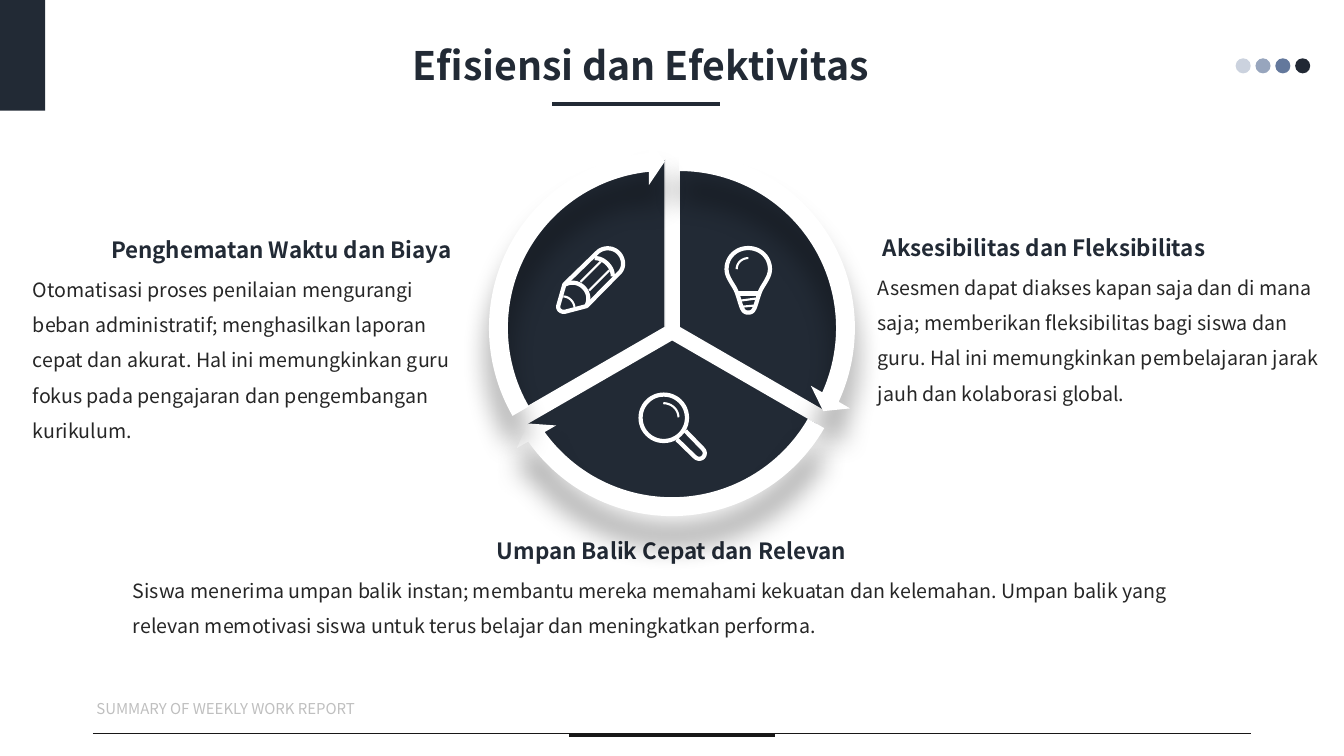
from dataclasses import dataclass

from lxml.etree import SubElement
from pptx import Presentation
from pptx.dml.color import RGBColor
from pptx.enum.shapes import MSO_CONNECTOR, MSO_SHAPE
from pptx.enum.text import MSO_ANCHOR, MSO_AUTO_SIZE, PP_ALIGN
from pptx.oxml.ns import qn
from pptx.util import Cm, Pt


@dataclass(frozen=True)
class Theme:
    font: str = "Noto Sans CJK SC"
    navy: str = "222A35"
    body: str = "262626"
    muted: str = "BFBFBF"
    rule: str = "181717"
    white: str = "FFFFFF"
    dots: tuple = ("CBD2DE", "97A5BD", "63789C", "212834")
    title_size: float = 28
    heading_size: float = 16
    body_size: float = 14
    footer_size: float = 10.7
    thick: float = 3
    thin: float = 1.5


# Icons are drawn on a grid 68 units high. A stroke is a start point followed
# by line ends (2 numbers) and cubic curves (6 numbers).
ICON_GRID = 68
ICON_HEIGHT = 1.73
PENCIL = {
    "thick": [
        [(8, 38), (41.5, 5.5), (47, 1, 56, 1, 61.5, 6.5), (67, 12, 68, 21, 62.5, 26.5),
         (30, 59.5), (9, 65), (5, 66, 1, 63, 2, 59), (8, 38)],
        [(38, 12), (43, 12, 47, 14, 50.5, 17.5), (54, 21, 56, 25, 56, 30)],
        [(9, 38), (15, 35, 22, 36, 27, 41), (32, 46, 33, 53, 30, 59)],
    ],
    "thin": [
        [(24, 35.5), (44, 15.5)],
        [(32.5, 44), (52.5, 24)],
        [(7, 50), (13, 50, 18, 56, 18, 61)],
    ],
}
BULB = {
    "thick": [
        [(23.5, 66), (17, 66, 17, 60, 12.5, 47), (10, 39, 2, 32, 2, 23),
         (2, 11, 11.5, 2, 23.5, 2), (35.5, 2, 45, 11, 45, 23),
         (45, 32, 37, 39, 34.5, 47), (30, 60, 30, 66, 23.5, 66)],
        [(12, 47), (35, 47)],
    ],
    "thin": [
        [(16, 54), (31, 52)],
        [(18, 60), (29, 59)],
        [(12, 23), (12, 17, 17, 12, 23.5, 12)],
    ],
}
MAGNIFIER = {
    "thick": [
        [(48.5, 25.5), (48.5, 38.2, 38.2, 48.5, 25.5, 48.5),
         (12.8, 48.5, 2.5, 38.2, 2.5, 25.5), (2.5, 12.8, 12.8, 2.5, 25.5, 2.5),
         (38.2, 2.5, 48.5, 12.8, 48.5, 25.5)],
        [(38.5, 47), (56, 64), (62, 70, 70, 62, 64, 56), (47, 38.5)],
    ],
    "thin": [[(25, 11), (33, 11, 40, 17, 40, 25)]],
}


def flatten(stroke, steps=12):
    """Turn a stroke's lines and cubic curves into a list of points."""
    points = [stroke[0]]
    for segment in stroke[1:]:
        if len(segment) == 2:
            points.append(segment)
            continue
        x0, y0 = points[-1]
        x1, y1, x2, y2, x3, y3 = segment
        for step in range(1, steps + 1):
            t = step / steps
            a, b, c, d = (1 - t) ** 3, 3 * t * (1 - t) ** 2, 3 * t * t * (1 - t), t ** 3
            points.append((a * x0 + b * x1 + c * x2 + d * x3,
                           a * y0 + b * y1 + c * y2 + d * y3))
    return points


class SlideBuilder:
    def __init__(self, slide, theme):
        self.slide = slide
        self.theme = theme

    def fill_frame(self, frame, text, size, color, bold=False, align=PP_ALIGN.LEFT, spacing=1.0):
        frame.word_wrap = True
        frame.auto_size = MSO_AUTO_SIZE.NONE
        para = frame.paragraphs[0]
        para.alignment = align
        para.line_spacing = spacing
        span = para.add_run()
        span.text = text
        span.font.name = self.theme.font
        span.font.size = Pt(size)
        span.font.bold = bold
        span.font.color.rgb = RGBColor.from_string(color)

    def title(self, text, left, top, width, height):
        title = self.slide.shapes.title
        title.left, title.top, title.width, title.height = map(Cm, (left, top, width, height))
        title.text_frame.vertical_anchor = MSO_ANCHOR.MIDDLE
        self.fill_frame(title.text_frame, text, self.theme.title_size, self.theme.navy,
                        bold=True, align=PP_ALIGN.CENTER)

    def text(self, text, place, size, color, **style):
        box = self.slide.shapes.add_textbox(*map(Cm, place))
        self.fill_frame(box.text_frame, text, size, color, **style)

    def heading(self, text, place, align):
        self.text(text, place, self.theme.heading_size, self.theme.navy, bold=True, align=align)

    def body(self, text, place):
        self.text(text, place, self.theme.body_size, self.theme.body, spacing=1.5)

    def shape(self, kind, place, color, adjustments=(), outline=None):
        shape = self.slide.shapes.add_shape(kind, *map(Cm, place))
        shape.shadow.inherit = False
        for index, value in enumerate(adjustments):
            shape.adjustments[index] = value
        shape.fill.solid()
        shape.fill.fore_color.rgb = RGBColor.from_string(color)
        if outline:
            shape.line.color.rgb = RGBColor.from_string(outline)
            shape.line.width = Pt(1)
        else:
            shape.line.fill.background()
        return shape

    def drop_shadow(self, shape):
        effects = shape._element.spPr.find(qn("a:effectLst"))
        shadow = SubElement(effects, qn("a:outerShdw"), blurRad=str(Pt(20)), dist=str(Pt(20)),
                            dir="5400000", algn="t", rotWithShape="0")
        color = SubElement(shadow, qn("a:srgbClr"), val="000000")
        SubElement(color, qn("a:alpha"), val="40000")

    def rule(self, left, right, y, color, weight):
        line = self.slide.shapes.add_connector(
            MSO_CONNECTOR.STRAIGHT, Cm(left), Cm(y), Cm(right), Cm(y))
        line.line.color.rgb = RGBColor.from_string(color)
        line.line.width = Pt(weight)
        SubElement(line._element.spPr, qn("a:effectLst"))

    def icon(self, strokes_by_weight, left, top):
        group = self.slide.shapes.add_group_shape()
        unit = Cm(ICON_HEIGHT) / ICON_GRID
        weights = {"thick": self.theme.thick, "thin": self.theme.thin}
        for weight, strokes in strokes_by_weight.items():
            for stroke in strokes:
                points = [(Cm(left) + x * unit, Cm(top) + y * unit) for x, y in flatten(stroke)]
                builder = group.shapes.build_freeform(*points[0])
                builder.add_line_segments(points[1:], close=stroke[0] == stroke[-1])
                shape = builder.convert_to_shape()
                shape.shadow.inherit = False
                shape.fill.background()
                shape.line.color.rgb = RGBColor.from_string(self.theme.white)
                shape.line.width = Pt(weights[weight])

    def cycle(self):
        """Draw three wedges, then the three ring arrows around them."""
        theme = self.theme
        full_turn, third = 216, 72  # adjustment units: 0.6 per degree
        corners = [(12.88, 4.01), (12.7, 4.32), (12.52, 4.01)]
        starts = [(162 + third * index) % full_turn for index in range(3)]
        for (left, top), start in zip(corners, starts):
            self.shape(MSO_SHAPE.PIE, (left, top, 8.48, 8.48), theme.navy,
                       (start, (start + third) % full_turn), outline=theme.white)
        for (left, top), start in zip(corners, starts):
            head = (start + third - 3.28) % full_turn
            arrow = self.shape(MSO_SHAPE.CIRCULAR_ARROW, (left - 0.53, top - 0.51, 9.53, 9.53),
                               theme.white, (0.05, 3.28, head, start, 0.06))
            self.drop_shadow(arrow)


def main():
    theme = Theme()
    deck = Presentation()
    deck.slide_width, deck.slide_height = Cm(33.87), Cm(19.05)
    page = SlideBuilder(deck.slides.add_slide(deck.slide_layouts[5]), theme)

    page.title("Efisiensi dan Efektivitas", 1.14, 0.91, 30.02, 1.45)
    page.body("Asesmen dapat diakses kapan saja dan di mana saja; memberikan fleksibilitas bagi siswa dan guru. Hal ini memungkinkan pembelajaran jarak jauh dan kolaborasi global.", (21.87, 6.53, 11.63, 3.28))
    page.heading("Aksesibilitas dan Fleksibilitas", (22, 5.77, 11.51, 0.94), PP_ALIGN.LEFT)
    page.body("Otomatisasi proses penilaian mengurangi beban administratif; menghasilkan laporan cepat dan akurat. Hal ini memungkinkan guru fokus pada pengajaran dan pengembangan kurikulum.", (0.58, 6.58, 11.23, 3.28))
    page.heading("Penghematan Waktu dan Biaya", (0.53, 5.82, 11.1, 0.94), PP_ALIGN.RIGHT)
    page.body("Siswa menerima umpan balik instan; membantu mereka memahami kekuatan dan kelemahan. Umpan balik yang relevan memotivasi siswa untuk terus belajar dan meningkatkan performa.", (3.1, 14.17, 27.84, 1.27))
    page.heading("Umpan Balik Cepat dan Relevan", (5.84, 13.41, 22.17, 0.94), PP_ALIGN.CENTER)

    page.cycle()
    page.icon(PENCIL, 14.02, 6.2)
    page.icon(BULB, 18.26, 6.2)
    page.icon(MAGNIFIER, 16.08, 9.88)

    page.shape(MSO_SHAPE.RECTANGLE, (0, 0, 1.14, 2.79), theme.navy)
    for index, color in enumerate(theme.dots):
        page.shape(MSO_SHAPE.OVAL, (31.14 + 0.5 * index, 1.47, 0.38, 0.38), color)
    page.rule(2.34, 31.52, 18.49, theme.rule, 0.5)
    page.rule(14.33, 19.53, 18.52, theme.rule, 2.25)
    page.text("SUMMARY OF WEEKLY WORK REPORT", (2.18, 17.5, 29.51, 0.71),
              theme.footer_size, theme.muted, align=PP_ALIGN.JUSTIFY)
    page.rule(13.92, 18.14, 2.62, theme.navy, 3)
    deck.save("out.pptx")


if __name__ == "__main__":
    main()
